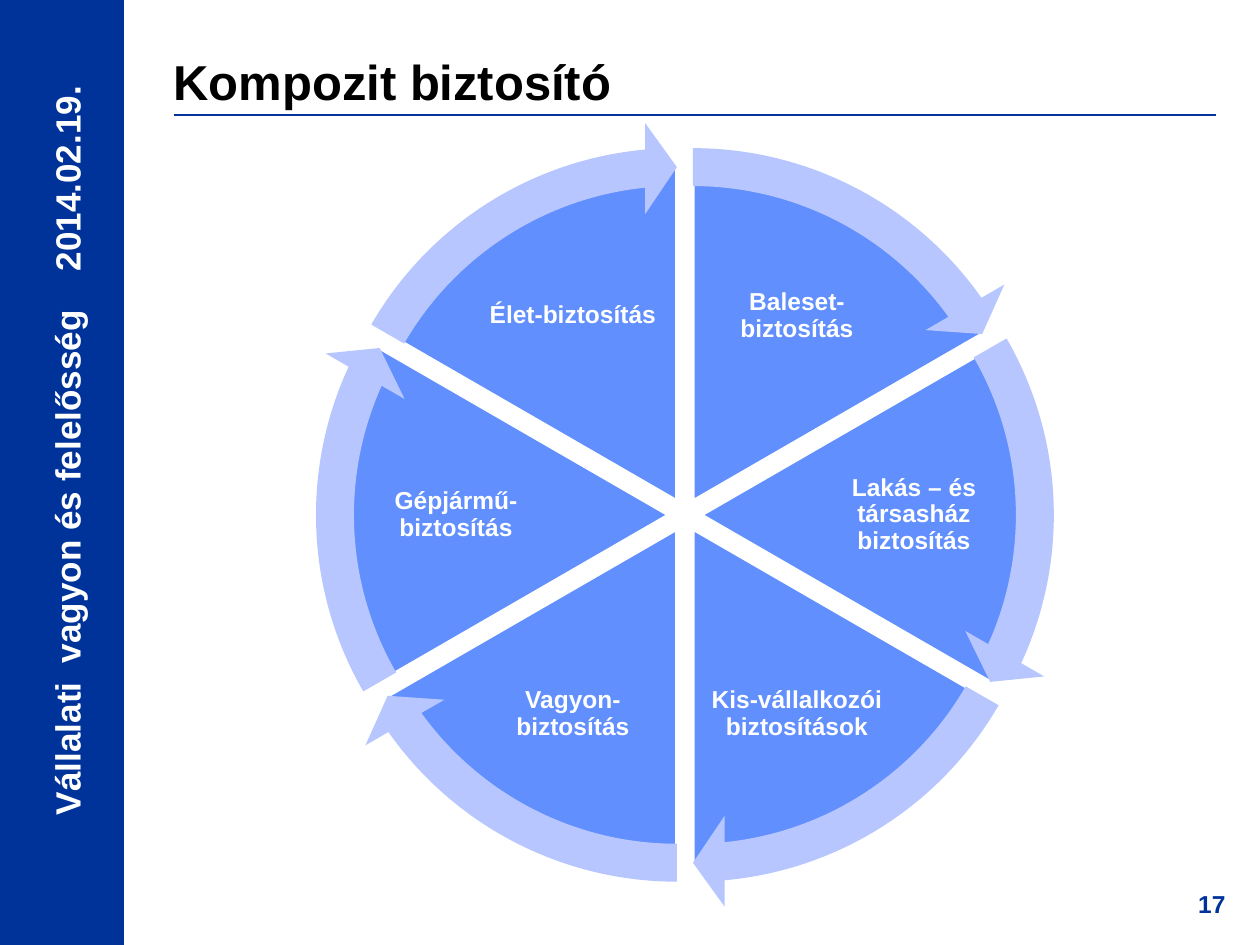
import math
from pptx import Presentation
from pptx import util as u
from pptx.dml.color import RGBColor
from pptx.enum import shapes, text
from pptx.oxml import parse_xml
from pptx.oxml.ns import nsdecls

PX = 914400 / 126
COLORS = {"navy": "003399", "slice": "618FFD", "arrow": "B7C6FE",
          "white": "FFFFFF", "black": "000000"}


def box(*px):
    return [u.Emu(round(v * PX)) for v in px]


def write(sp, parts, size, color, align, anchor, inset=None):
    """Fill a text frame; each part is (text, letter spacing in points)."""
    tf = sp.text_frame
    tf.word_wrap = True
    tf.auto_size = text.MSO_AUTO_SIZE.NONE
    tf.vertical_anchor = anchor
    if inset is not None:
        tf.margin_left = tf.margin_right = tf.margin_top = tf.margin_bottom = box(inset)[0]
    p = tf.paragraphs[0]
    p.alignment = align
    for words, spacing in parts:
        r = p.add_run()
        r.text = words
        r.font.name, r.font.size, r.font.bold = "Arial", u.Pt(size), True
        r.font.color.rgb = RGBColor.from_string(COLORS[color])
        if spacing:
            r._r.get_or_add_rPr().set("spc", str(round(spacing * 100)))
    return p


prs = Presentation()
prs.slide_width, prs.slide_height = box(1260, 945)
s = prs.slides.add_slide(prs.slide_layouts[5])
rgb = {name: RGBColor.from_string(value) for name, value in COLORS.items()}
SHAPE, ALIGN, ANCHOR = shapes.MSO_SHAPE, text.PP_ALIGN, text.MSO_ANCHOR

# Side band with its vertical caption
band = s.shapes.add_shape(SHAPE.RECTANGLE, *box(0, 0, 124, 945))
band.shadow.inherit = False
band.fill.solid()
band.fill.fore_color.rgb = rgb["navy"]
band.line.fill.background()
caption = s.shapes.add_textbox(*box(-368, 423, 869, 55))
caption.rotation = 270
write(caption, [("Vállalati", 0), (" ", 5.56), ("vagyon és felelősség", 0),
                (" ", 16.7), ("2014.02.19.", 0)],
      20, "white", ALIGN.CENTER, ANCHOR.MIDDLE)

# Title and rule
title = s.shapes.title
title.left, title.top, title.width, title.height = box(161, 45, 935, 100)
write(title, [("Kompozit biztosító", 0)], 28, "black", ALIGN.LEFT, ANCHOR.TOP)
rule = s.shapes.add_connector(shapes.MSO_CONNECTOR.STRAIGHT, *box(174, 115, 1216, 115))
rule.line.color.rgb = rgb["navy"]
rule.line.width = u.Pt(1.5)
rule._element.spPr.append(parse_xml(f"<a:effectLst {nsdecls('a')}/>"))

# Page number
number = s.shapes.add_textbox(*box(941, 872, 297, 63))
write(number, [("17", 0)], 14, "navy", ALIGN.RIGHT, ANCHOR.MIDDLE)

# Cycle: angles are in units of 100000/60000 degree, so a full turn is 216
CX, CY, GAP = 685, 515, 16
TURN, STEP, TOP, HEAD = 216, 36, 162, 3.275
slices = [  # label, centre offset from the hub, label width and height
    ("Baleset-biztosítás", 112, -199, 176, 136),
    ("Lakás – és társasház biztosítás", 229, 0, 185, 132),
    ("Kis-vállalkozói biztosítások", 112, 199, 176, 136),
    ("Vagyon-biztosítás", -112, 199, 176, 136),
    ("Gépjármű-biztosítás", -229, 0, 185, 132),
    ("Élet-biztosítás", -112, -199, 176, 136),
]
rings = [(SHAPE.PIE, 675, "slice"), (SHAPE.CIRCULAR_ARROW, 759, "arrow")]
for kind, size, color in rings:
    for i, (label, dx, dy, w, h) in enumerate(slices):
        start = (TOP + i * STEP) % TURN
        end = (start + STEP) % TURN
        middle = math.radians(i * 60 - 60)
        x = CX + GAP * math.cos(middle) - size / 2
        y = CY + GAP * math.sin(middle) - size / 2
        sp = s.shapes.add_shape(kind, *box(x, y, size, size))
        sp.shadow.inherit = False
        sp.fill.solid()
        sp.fill.fore_color.rgb = rgb[color]
        if kind == SHAPE.PIE:
            values = [start, end]
            sp.line.color.rgb = rgb["white"]
            sp.line.width = u.Pt(2)
            name = s.shapes.add_textbox(*box(CX + dx - w / 2, CY + dy - h / 2, w, h))
            p = write(name, [(label, 0)], 14, "white", ALIGN.CENTER, ANCHOR.MIDDLE, 2)
            p.line_spacing = 0.9
        else:
            values = [0.05, HEAD, (start + STEP - HEAD) % TURN, start, 0.06]
            sp.line.fill.background()
        for n, value in enumerate(values):
            sp.adjustments[n] = value

prs.save("out.pptx")
